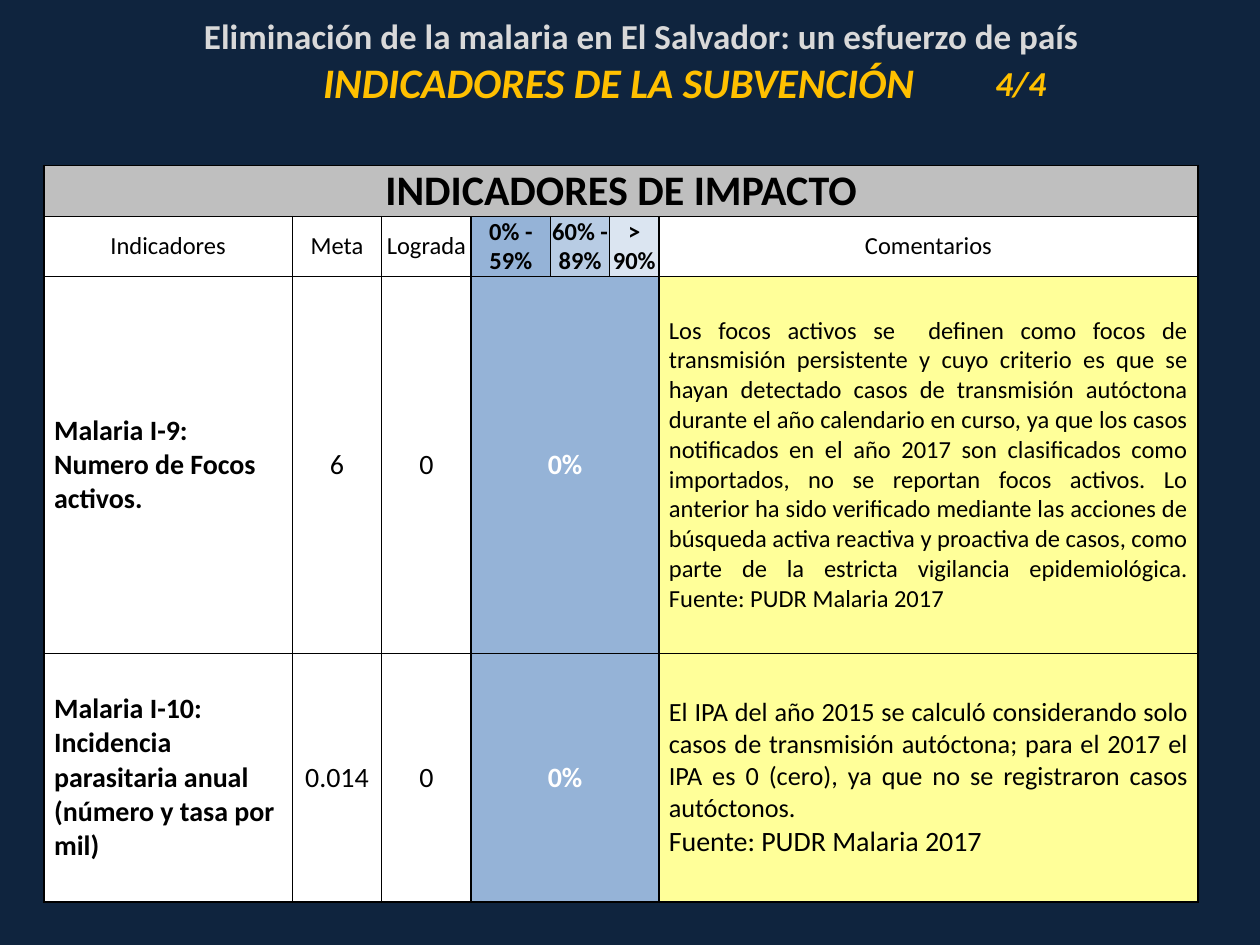
from dataclasses import dataclass
from typing import NamedTuple, Optional

from lxml.etree import SubElement
from pptx import Presentation
from pptx.dml.color import RGBColor
from pptx.enum.text import MSO_ANCHOR, PP_ALIGN
from pptx.oxml.ns import qn
from pptx.util import Inches, Pt

SLIDE_WIDTH, SLIDE_HEIGHT = Inches(10), Inches(7.5)


@dataclass(frozen=True)
class Theme:
    font: str = "Calibri"
    navy: str = "0F243E"
    black: str = "000000"
    white: str = "FFFFFF"
    pale_gray: str = "D9D9D9"
    gold: str = "FFC000"
    band: str = "BFBFBF"
    low: str = "95B3D7"
    middle: str = "B8CCE4"
    high: str = "DBE5F1"
    note: str = "FFFF99"
    heading: int = 24
    subheading: int = 20
    body: int = 16
    comment: int = 15
    small: int = 14


THEME = Theme()


class Line(NamedTuple):
    text: str
    size: int = THEME.body


@dataclass(frozen=True)
class Entry:
    """One table cell, possibly spanning several columns."""
    lines: tuple[Line, ...] = ()
    fill: Optional[str] = THEME.white
    color: str = THEME.black
    bold: bool = False
    italic: bool = False
    align: PP_ALIGN = PP_ALIGN.CENTER
    anchor: MSO_ANCHOR = MSO_ANCHOR.MIDDLE
    side_margin: float = 0
    span: int = 1


@dataclass(frozen=True)
class Grid:
    """Table geometry, every length being a share of the slide's size."""
    left: float
    top: float
    columns: tuple[float, ...]
    rows: tuple[float, ...]
    border: Optional[str] = None


def across(share: float) -> int:
    return round(SLIDE_WIDTH * share)


def down(share: float) -> int:
    return round(SLIDE_HEIGHT * share)


def set_borders(cell, color: Optional[str]) -> None:
    properties = cell._tc.get_or_add_tcPr()
    for position, side in enumerate(("lnL", "lnR", "lnT", "lnB")):
        line = SubElement(properties, qn(f"a:{side}"), w=str(Pt(1)))
        if color:
            solid = SubElement(line, qn("a:solidFill"))
            SubElement(solid, qn("a:srgbClr"), val=color)
        else:
            SubElement(line, qn("a:noFill"))
        properties.insert(position, line)


def set_surface(cell, entry: Entry, border: Optional[str]) -> None:
    margins = {"margin_left": Inches(entry.side_margin),
               "margin_right": Inches(entry.side_margin),
               "margin_top": 0, "margin_bottom": 0,
               "vertical_anchor": entry.anchor}
    for name, value in margins.items():
        setattr(cell, name, value)
    if entry.fill:
        cell.fill.solid()
        cell.fill.fore_color.rgb = RGBColor.from_string(entry.fill)
    else:
        cell.fill.background()
    set_borders(cell, border)


def write_lines(cell, entry: Entry) -> None:
    for index, line in enumerate(entry.lines):
        frame = cell.text_frame
        para = frame.add_paragraph() if index else frame.paragraphs[0]
        para.alignment = entry.align
        span = para.add_run()
        span.text = line.text
        formats = {"name": THEME.font, "size": Pt(line.size),
                   "bold": entry.bold, "italic": entry.italic}
        for name, value in formats.items():
            setattr(span.font, name, value)
        span.font.color.rgb = RGBColor.from_string(entry.color)


def draw_table(page, grid: Grid, rows: list[list[Entry]]) -> None:
    table = page.shapes.add_table(
        len(grid.rows), len(grid.columns), across(grid.left), down(grid.top),
        across(sum(grid.columns)), down(sum(grid.rows))).table
    table.first_row = table.horz_banding = False
    for column, share in zip(table.columns, grid.columns):
        column.width = across(share)
    for row, share in zip(table.rows, grid.rows):
        row.height = down(share)
    for row_index, entries in enumerate(rows):
        start = 0
        for entry in entries:
            cells = [table.cell(row_index, start + step) for step in range(entry.span)]
            for cell in cells:
                set_surface(cell, entry, grid.border)
            if entry.span > 1:
                cells[0].merge(cells[-1])
            write_lines(cells[0], entry)
            start += entry.span


def header(text: str, fill: str = THEME.white, bold: bool = False) -> Entry:
    return Entry((Line(text, THEME.small),), fill, bold=bold)


def indicator_row(name: str, target: str, achieved: str, rate: str,
                  comments: tuple[Line, ...]) -> list[Entry]:
    inset = 0.08
    return [
        Entry((Line(name),), bold=True, align=PP_ALIGN.LEFT, side_margin=inset),
        Entry((Line(target),), side_margin=inset),
        Entry((Line(achieved),), side_margin=inset),
        Entry((Line(rate),), THEME.low, THEME.white, bold=True, side_margin=inset, span=3),
        Entry(comments, THEME.note, align=PP_ALIGN.JUSTIFY, side_margin=inset),
    ]


INDICATOR_GRID = Grid(0.035, 0.175, (0.197, 0.071, 0.071, 0.063, 0.047, 0.039, 0.428),
                      (0.04, 0.032, 0.399, 0.263), THEME.black)
INDICATORS = [
    [Entry((Line("INDICADORES DE IMPACTO", THEME.heading),), THEME.band, bold=True, span=7)],
    [header("Indicadores"), header("Meta"), header("Lograda"),
     header("0% - 59%", THEME.low, True), header("60% - 89%", THEME.middle, True),
     header("> 90%", THEME.high, True), header("Comentarios")],
    indicator_row("Malaria I-9: Numero de Focos activos.", "6", "0", "0%", (Line(
        "Los focos activos se  definen como focos de transmisión persistente y cuyo "
        "criterio es que se hayan detectado casos de transmisión autóctona durante el "
        "año calendario en curso, ya que los casos notificados en el año 2017 son "
        "clasificados como importados, no se reportan focos activos. Lo anterior ha "
        "sido verificado mediante las acciones de búsqueda activa reactiva y proactiva "
        "de casos, como parte de la estricta vigilancia epidemiológica. "
        "Fuente: PUDR Malaria 2017", THEME.small),)),
    indicator_row("Malaria I-10: Incidencia parasitaria anual (número y tasa por mil)",
                  "0.014", "0", "0%", (
                      Line("El IPA del año 2015 se calculó considerando solo casos de "
                           "transmisión autóctona; para el 2017 el IPA es 0 (cero), ya que "
                           "no se registraron casos autóctonos.", THEME.comment),
                      Line("Fuente: PUDR Malaria 2017"))),
]

TITLE_GRID = Grid(0.062, 0.017, (0.13, 0.598, 0.166), (0.041, 0.031))
TITLE = [
    [Entry((Line("Eliminación de la malaria en El Salvador: un esfuerzo de país",
                 THEME.subheading),), None, THEME.pale_gray, bold=True,
           anchor=MSO_ANCHOR.BOTTOM, span=3)],
    [Entry(fill=None),
     Entry((Line("INDICADORES DE LA SUBVENCIÓN", THEME.heading),), None, THEME.gold,
           bold=True, italic=True, anchor=MSO_ANCHOR.BOTTOM),
     Entry((Line("4/4", THEME.subheading),), None, THEME.gold, bold=True, italic=True,
           align=PP_ALIGN.LEFT)],
]


def main() -> None:
    deck = Presentation()
    deck.slide_width, deck.slide_height = SLIDE_WIDTH, SLIDE_HEIGHT
    page = deck.slides.add_slide(deck.slide_layouts[6])
    page.background.fill.solid()
    page.background.fill.fore_color.rgb = RGBColor.from_string(THEME.navy)
    draw_table(page, INDICATOR_GRID, INDICATORS)
    draw_table(page, TITLE_GRID, TITLE)
    deck.save("out.pptx")


if __name__ == "__main__":
    main()
